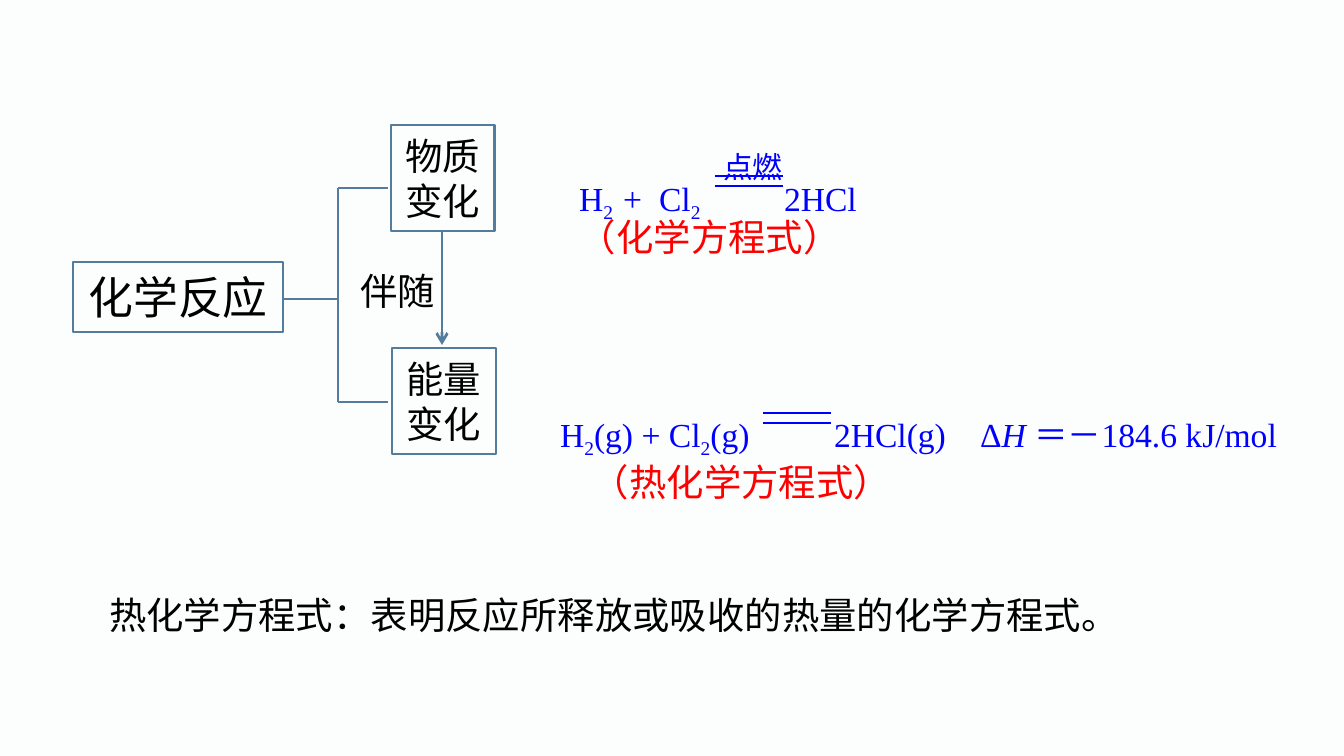
from lxml import etree
from pptx import Presentation
from pptx.dml.color import RGBColor
from pptx.enum.shapes import MSO_CONNECTOR, MSO_SHAPE
from pptx.enum.text import MSO_ANCHOR, PP_ALIGN
from pptx.oxml.ns import qn
from pptx.util import Pt

PX = 914400 / 134.4
COLORS = {"background": "FCFDFD", "frame": "547D9D", "text": "000000",
          "equation": "0000FF", "caption": "FF0000"}
CJK, LATIN = "Noto Sans CJK SC", "Times New Roman"
RECTANGLE, STRAIGHT = MSO_SHAPE.RECTANGLE, MSO_CONNECTOR.STRAIGHT
TOP, MIDDLE = MSO_ANCHOR.TOP, MSO_ANCHOR.MIDDLE
LEFT, CENTER = PP_ALIGN.LEFT, PP_ALIGN.CENTER

prs = Presentation()
prs.slide_width, prs.slide_height = round(1344 * PX), round(756 * PX)
slide = prs.slides.add_slide(prs.slide_layouts[6])
slide.background.fill.solid()
slide.background.fill.fore_color.rgb = RGBColor.from_string(COLORS["background"])


def write(shape, runs, size, color, font=CJK, align=LEFT, anchor=TOP,
          inset=(13, 7), spacing=1, tabs=()):
    """Fill a shape with one paragraph; each run is (text, style)."""
    frame = shape.text_frame
    frame.word_wrap = True
    frame.vertical_anchor = anchor
    frame.margin_left = frame.margin_right = round(inset[0] * PX)
    frame.margin_top = frame.margin_bottom = round(inset[1] * PX)
    paragraph = frame.paragraphs[0]
    paragraph.alignment = align
    paragraph.line_spacing = float(spacing)
    if tabs:
        stops = etree.SubElement(paragraph._p.get_or_add_pPr(), qn("a:tabLst"))
        for stop in tabs:
            etree.SubElement(stops, qn("a:tab"), pos=str(round(stop * PX)), algn="l")
    for text, style in runs:
        run = paragraph.add_run()
        run.text = text
        run.font.size = Pt(size)
        run.font.name = font
        run.font.color.rgb = RGBColor.from_string(COLORS[color])
        properties = run.font._element
        etree.SubElement(properties, qn("a:ea"), typeface=CJK)
        if style == "sub":
            properties.set("baseline", "-25000")
        elif style == "italic":
            run.font.italic = True


def add_line(x1, y1, x2, y2, color):
    line = slide.shapes.add_connector(
        STRAIGHT, *[round(v * PX) for v in (x1, y1, x2, y2)])
    line.line.color.rgb = RGBColor.from_string(COLORS[color])
    line.line.width = Pt(1.5)
    etree.SubElement(line._element.spPr, qn("a:effectLst"))
    return line


# Concept boxes
for text, box, size, anchor in [
    ("化学反应", (73, 262, 210, 70), 24, TOP),
    ("物质变化", (391, 125, 104, 106), 20, MIDDLE),
    ("能量变化", (392, 348, 104, 106), 20, MIDDLE),
]:
    concept = slide.shapes.add_shape(RECTANGLE, *[round(v * PX) for v in box])
    concept.shadow.inherit = False
    concept.fill.background()
    concept.line.color.rgb = RGBColor.from_string(COLORS["frame"])
    concept.line.width = Pt(1.5)
    write(concept, [(text, "")], size, "text", align=CENTER, anchor=anchor, inset=(8, 8))

# Bracket from the reaction to its two changes
trunk_x, arm_x, upper_y, lower_y = 338, 388, 188, 402
add_line(283, 299, trunk_x, 299, "frame")
add_line(trunk_x, upper_y, trunk_x, lower_y, "frame")
for arm_y in (upper_y, lower_y):
    add_line(trunk_x, arm_y, arm_x, arm_y, "frame")

# Arrow between the two changes
accompany = add_line(442, 231, 442, 345, "frame")
etree.SubElement(accompany.line._get_or_add_ln(), qn("a:tailEnd"), type="arrow")

# Double bars that serve as equals signs
for bar_x, bar_y in ((763, 413), (715, 176)):
    for offset in (0, 10):
        add_line(bar_x, bar_y + offset, bar_x + 68, bar_y + offset, "equation")

# Equations; tab stops leave room for the double bars
thermochemical = [("H", ""), ("2", "sub"), ("(g) + Cl", ""), ("2", "sub"),
                  ("(g)\t2HCl(g)\tΔ", ""), ("H", "italic"), (" ＝－184.6 kJ/mol", "")]
chemical = [("H", ""), ("2", "sub"), ("\t+\tCl", ""), ("2", "sub"), ("\t2HCl", "")]
condition = [("点燃", "")]
for runs, box, size, tabs in [
    (thermochemical, (547, 361, 773, 82), 18, (274, 420)),
    (chemical, (566, 125, 328, 82), 18, (44, 80, 205)),
    (condition, (710, 106, 101, 74), 16, ()),
]:
    equation = slide.shapes.add_textbox(*[round(v * PX) for v in box])
    write(equation, runs, size, "equation", font=LATIN, spacing=2, tabs=tabs)

# Labels, captions and definition
for text, box, color, align, inset in [
    ("伴随", (343, 260, 110, 60), "text", CENTER, (8, 8)),
    ("（化学方程式）", (566, 207, 292, 59), "caption", LEFT, (13, 7)),
    ("（热化学方程式）", (579, 452, 358, 59), "caption", LEFT, (13, 7)),
    ("热化学方程式：表明反应所释放或吸收的热量的化学方程式。",
     (96, 585, 1089, 59), "text", LEFT, (13, 7)),
]:
    label = slide.shapes.add_textbox(*[round(v * PX) for v in box])
    write(label, [(text, "")], 20, color, align=align, inset=inset)

prs.save("out.pptx")
